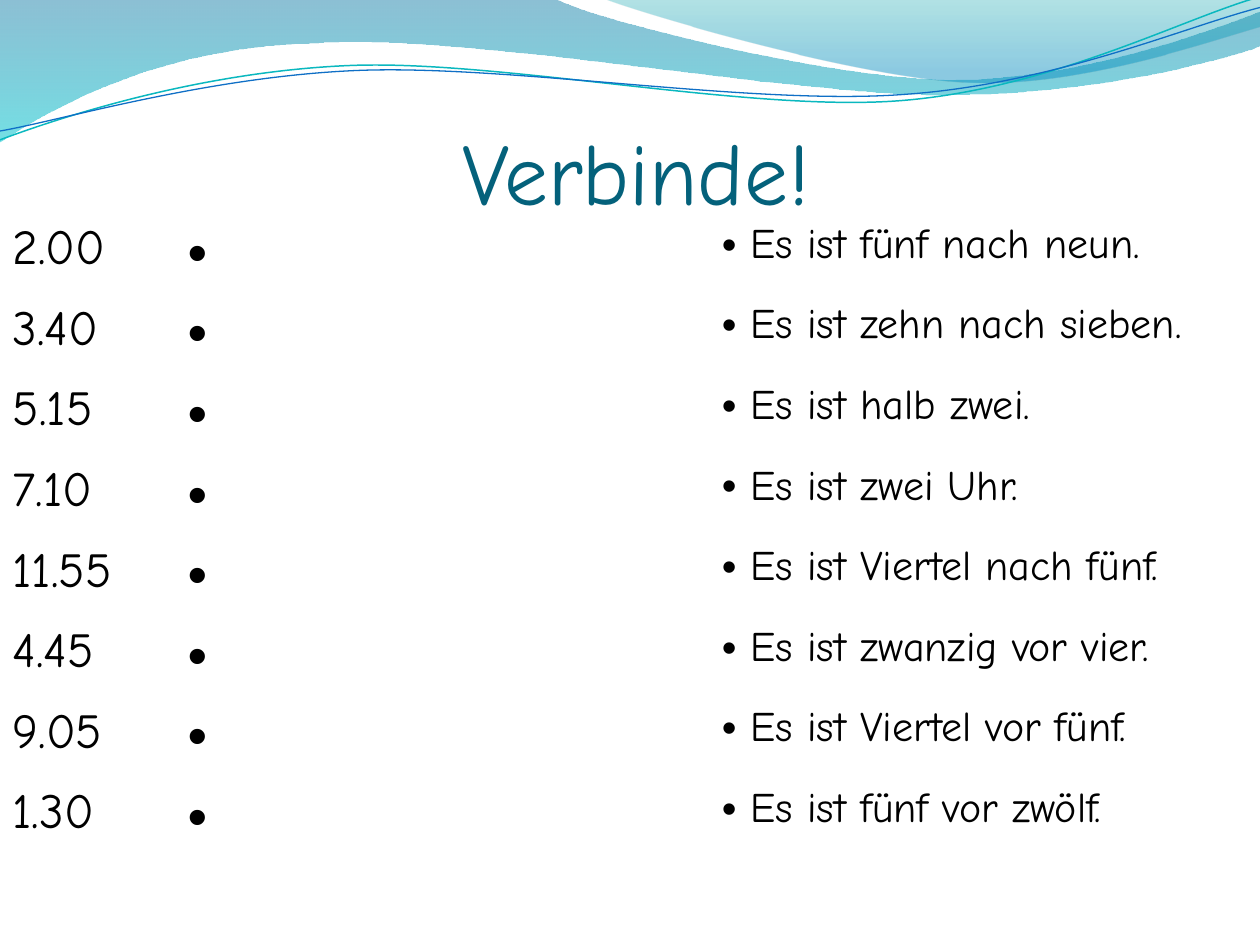
import math
import pptx
import pptx.util
import pptx.dml.color
import pptx.enum.text
import lxml.etree

Inches = pptx.util.Inches
Pt = pptx.util.Pt
RGBColor = pptx.dml.color.RGBColor
qn = pptx.oxml.ns.qn

BLACK = RGBColor(0x00, 0x00, 0x00)
TITLE = RGBColor(0x04, 0x61, 0x7B)
BLUE = RGBColor(0x00, 0x74, 0xA1)
CYAN = RGBColor(0x00, 0xC6, 0xCF)
TEAL = RGBColor(0x00, 0xA1, 0xA9)
SKY = RGBColor(0x00, 0x8B, 0xBF)
AQUA = RGBColor(0x0A, 0xB8, 0xBF)
NAVY = RGBColor(0x0F, 0x6F, 0xC6)
FONT = "Comic Neue"
TILT = 2.7

prs = pptx.Presentation()
prs.slide_width = Inches(10)
prs.slide_height = Inches(7.5)
slide = prs.slides.add_slide(prs.slide_layouts[6])


def draw(start, parts, close):
    pen = slide.shapes.build_freeform(Inches(start[0]), Inches(start[1]), scale=1.0)
    spots = [part[i:i + 2] for part in parts for i in range(0, len(part), 2)]
    pen.add_line_segments([(Inches(x), Inches(y)) for x, y in spots], close=close)
    shape = pen.convert_to_shape()
    shape.shadow.inherit = False
    legs = iter(list(shape._element.iter(qn("a:lnTo"))))
    for part in parts:
        leg = next(legs)
        if len(part) == 6:
            leg.addprevious(lxml.etree.Element(qn("a:cubicBezTo")))
            curve = leg.getprevious()
            for piece in (leg, next(legs), next(legs)):
                curve.append(piece[0])
                piece.getparent().remove(piece)
    return shape


def write(para, text, size, color=BLACK):
    run = para.add_run()
    run.text = text
    run.font.name = FONT
    run.font.size = Pt(size)
    run.font.color.rgb = color
    return run


waves = [
    ((0, 0),
     [(4.4, -0.01), (4.76, 0.17, 6.64, 0.63, 7.58, 0.63), (8.53, 0.63, 9.58, 0.26, 10, 0.09),
      (10.01, 0.36), (9.83, 0.44, 8.7, 0.76, 7.46, 0.75), (6.22, 0.75, 3.82, 0.28, 2.57, 0.34),
      (1.29, 0.36, 0.46, 0.83, -0.01, 1.13)],
     [(0, BLUE, 45), (1, CYAN, 55)]),
    ((4.79, -0.01),
     [(5.09, 0.11, 6.82, 0.62, 7.69, 0.65), (8.56, 0.69, 9.61, 0.32, 10, 0.21), (10, 0)],
     [(0, TEAL, 30), (0.8, SKY, 45)]),
]
for start, parts, stops in waves:
    wave = draw(start, parts, True)
    wave.line.fill.background()
    wave.fill.gradient()
    wave.fill.gradient_angle = 270
    for stop, (place, color, alpha) in zip(wave.fill.gradient_stops, stops):
        stop.position = place
        stop.color.rgb = color
    for tint, (place, color, alpha) in zip(wave._element.spPr.iter(qn("a:srgbClr")), stops):
        lxml.etree.SubElement(tint, qn("a:alpha")).set("val", str(alpha * 1000))

lines = [
    ((4.99, 0.58), (0, 1.11),
     [(0.48, 0.93, 1.58, 0.57, 2.77, 0.52), (3.95, 0.47, 5.93, 0.89, 7.13, 0.8),
      (8.33, 0.71, 9.38, 0.15, 9.98, -0.02)], AQUA, 0.85),
    ((5, 0.59), (0, 1.04),
     [(0.47, 0.96, 1.64, 0.61, 2.83, 0.56), (4.03, 0.51, 5.97, 0.84, 7.17, 0.75),
      (8.36, 0.67, 9.41, 0.21, 10, 0.06)], NAVY, 0.75),
]
cos = math.cos(math.radians(TILT))
sin = math.sin(math.radians(TILT))
for (mid, level), start, parts, color, width in lines:
    turned = []
    for part in [start] + parts:
        spots = []
        for x, y in zip(part[::2], part[1::2]):
            spots += [mid + (x - mid) * cos - (y - level) * sin,
                      level + (x - mid) * sin + (y - level) * cos]
        turned.append(spots)
    line = draw(turned[0], turned[1:], False)
    line.rotation = 360 - TILT
    line.fill.background()
    line.line.color.rgb = color
    line.line.width = Pt(width)

title = slide.shapes.add_textbox(Inches(0.51), Inches(0.52), Inches(9.08), Inches(1.25))
frame = title.text_frame
frame.word_wrap = True
frame.vertical_anchor = pptx.enum.text.MSO_ANCHOR.BOTTOM
frame.margin_left = frame.margin_right = frame.margin_bottom = 0
frame.margin_top = Inches(0.05)
frame.paragraphs[0].alignment = pptx.enum.text.PP_ALIGN.CENTER
write(frame.paragraphs[0], "Verbinde!", 50, TITLE)

times = [
    ("2.00", "fünf nach neun"),
    ("3.40", "zehn nach sieben"),
    ("5.15", "halb zwei"),
    ("7.10", "zwei Uhr"),
    ("11.55", "Viertel nach fünf"),
    ("4.45", "zwanzig vor vier"),
    ("9.05", "Viertel vor fünf"),
    ("1.30", "fünf vor zwölf"),
]
table = slide.shapes.add_table(len(times), 3, 0, Inches(1.7), Inches(10), Inches(5.12)).table
table.first_row = False
table.horz_banding = False
for column, width in zip(table.columns, (1.39, 4.24, 4.37)):
    column.width = Inches(width)
for row, (clock, phrase) in enumerate(times):
    cells = [table.cell(row, col) for col in range(3)]
    for cell in cells:
        cell.fill.background()
    left, dot, right = [cell.text_frame.paragraphs[0] for cell in cells]
    write(left, clock, 28)
    write(dot, " ", 32)
    run = write(right, f" Es ist {phrase}.", 24)
    run.font._element.set("kern", "0")
    for para in (dot, right):
        props = para._p.get_or_add_pPr()
        props.set("marL", "0")
        props.set("indent", "0")
        lxml.etree.SubElement(props, qn("a:buFont")).set("typeface", "Arial")
        lxml.etree.SubElement(props, qn("a:buChar")).set("char", "•")

prs.save("out.pptx")
